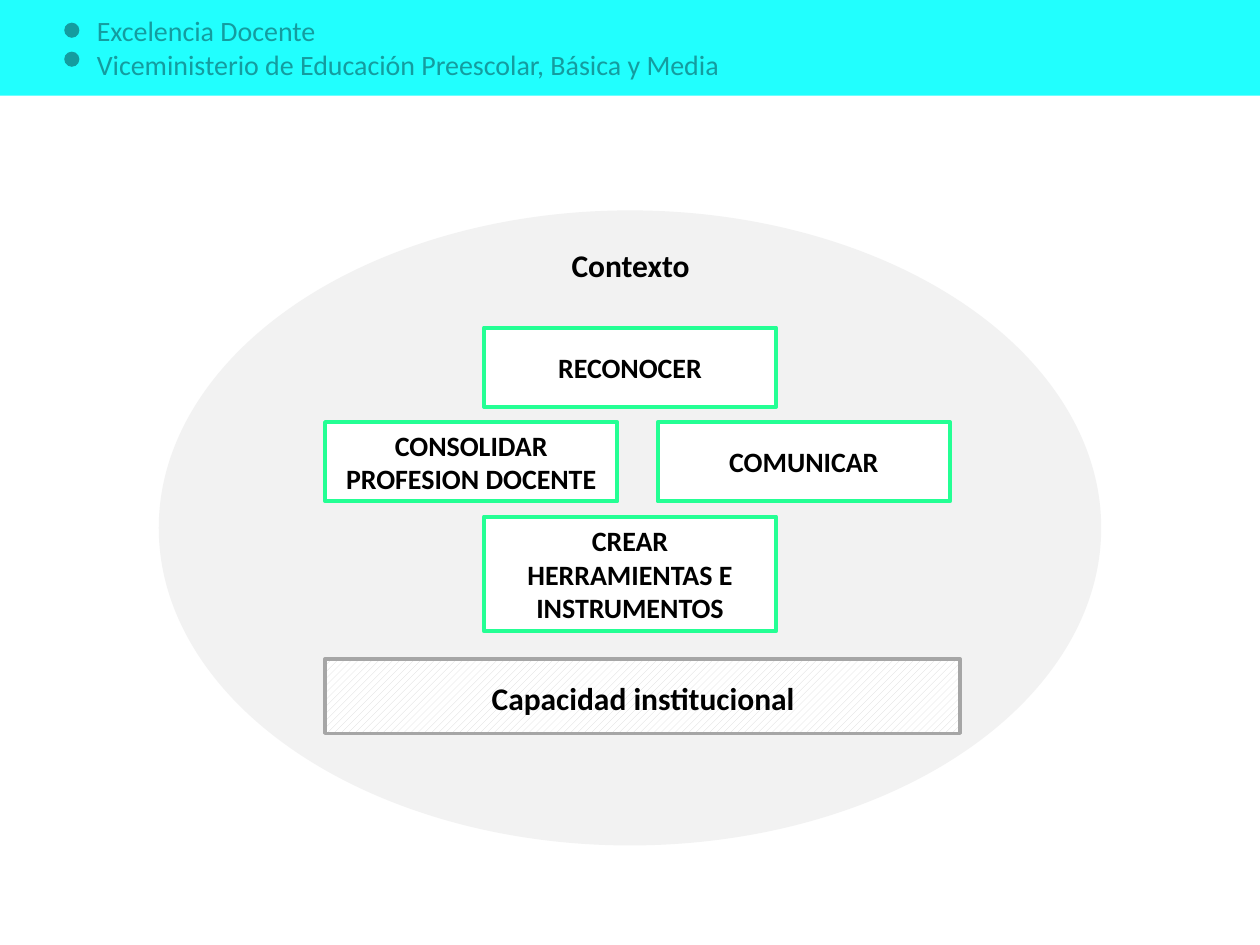
"""Build the context diagram slide of the teaching excellence programme."""
from dataclasses import dataclass

from pptx import Presentation
from pptx.dml.color import RGBColor as RGB
from pptx.enum.dml import MSO_PATTERN as Pattern
from pptx.enum.shapes import MSO_SHAPE as Shape
from pptx.enum.text import MSO_ANCHOR as Anchor, MSO_AUTO_SIZE as Fit, PP_ALIGN as Align
from pptx.util import Inches, Pt


@dataclass(frozen=True)
class Theme:
    font: str = "Calibri"
    body: int = 16
    title: int = 18
    cyan: RGB = RGB(0x21, 0xFF, 0xFE)
    teal: RGB = RGB(0x14, 0x9C, 0x9F)
    green: RGB = RGB(0x24, 0xFF, 0x94)
    pale: RGB = RGB(0xF2, 0xF2, 0xF2)
    hatch: RGB = RGB(0xD9, 0xD9, 0xD9)
    gray: RGB = RGB(0xA6, 0xA6, 0xA6)
    white: RGB = RGB(0xFF, 0xFF, 0xFF)
    black: RGB = RGB(0, 0, 0)


theme = Theme()


def draw(shapes, kind, box, fill=None, line=None, width=2.25):
    shape = shapes.add_shape(kind, *map(Inches, box))
    shape.shadow.inherit = False
    if fill is not None:
        shape.fill.solid()
        shape.fill.fore_color.rgb = fill
    if line is None:
        shape.line.fill.background()
    else:
        shape.line.color.rgb = line
        shape.line.width = Pt(width)
    return shape


def write(shape, text, size=theme.body, color=theme.black, bold=True,
          align=Align.CENTER, anchor=Anchor.TOP):
    frame = shape.text_frame
    frame.word_wrap = True
    frame.auto_size = Fit.SHAPE_TO_FIT_TEXT
    frame.vertical_anchor = anchor
    frame.text = text
    for para in frame.paragraphs:
        para.alignment = align
        font = para.runs[0].font
        font.name, font.size, font.bold = theme.font, Pt(size), bold
        font.color.rgb = color


deck = Presentation()
deck.slide_width, deck.slide_height = Inches(10), Inches(7.5)
slide = deck.slides.add_slide(deck.slide_layouts[6])
shapes = slide.shapes

draw(shapes, Shape.RECTANGLE, (0, -0.03, 10.04, 0.79), theme.cyan)
header = shapes.add_group_shape().shapes
for top in (0.18, 0.41):
    draw(header, Shape.OVAL, (0.51, top, 0.12, 0.12), theme.teal)
label = header.add_textbox(*map(Inches, (0.67, 0.06, 6.58, 0.64)))
write(label, "Excelencia Docente\nViceministerio de Educación Preescolar, Básica y Media",
      color=theme.teal, bold=False, align=Align.LEFT)

draw(shapes, Shape.OVAL, (1.26, 1.67, 7.48, 5.04), theme.pale)

first, step = 2.6, 0.75
goals = (
    ("COMUNICAR", 5.22, 1, 0.63),
    ("RECONOCER", 3.84, 0, 0.63),
    ("CREAR HERRAMIENTAS E INSTRUMENTOS", 3.84, 2, 0.91),
    ("CONSOLIDAR PROFESION DOCENTE", 2.58, 1, 0.63),
)
for text, left, row, height in goals:
    box = (left, first + row * step, 2.32, height)
    goal = draw(shapes, Shape.RECTANGLE, box, theme.white, theme.green)
    write(goal, text, anchor=Anchor.MIDDLE)

base = draw(shapes, Shape.RECTANGLE, (2.58, 5.23, 5.04, 0.59), line=theme.gray, width=2)
base.rotation = 180
base.fill.patterned()
base.fill.pattern = Pattern.WIDE_UPWARD_DIAGONAL
base.fill.fore_color.rgb = theme.hatch
base.fill.back_color.rgb = theme.white

titles = (
    ("Contexto", (3.92, 1.9, 2.17, 0.4)),
    ("Capacidad institucional", (3.5, 5.34, 3.21, 0.4)),
)
for text, box in titles:
    write(shapes.add_textbox(*map(Inches, box)), text, size=theme.title)

deck.save("out.pptx")
